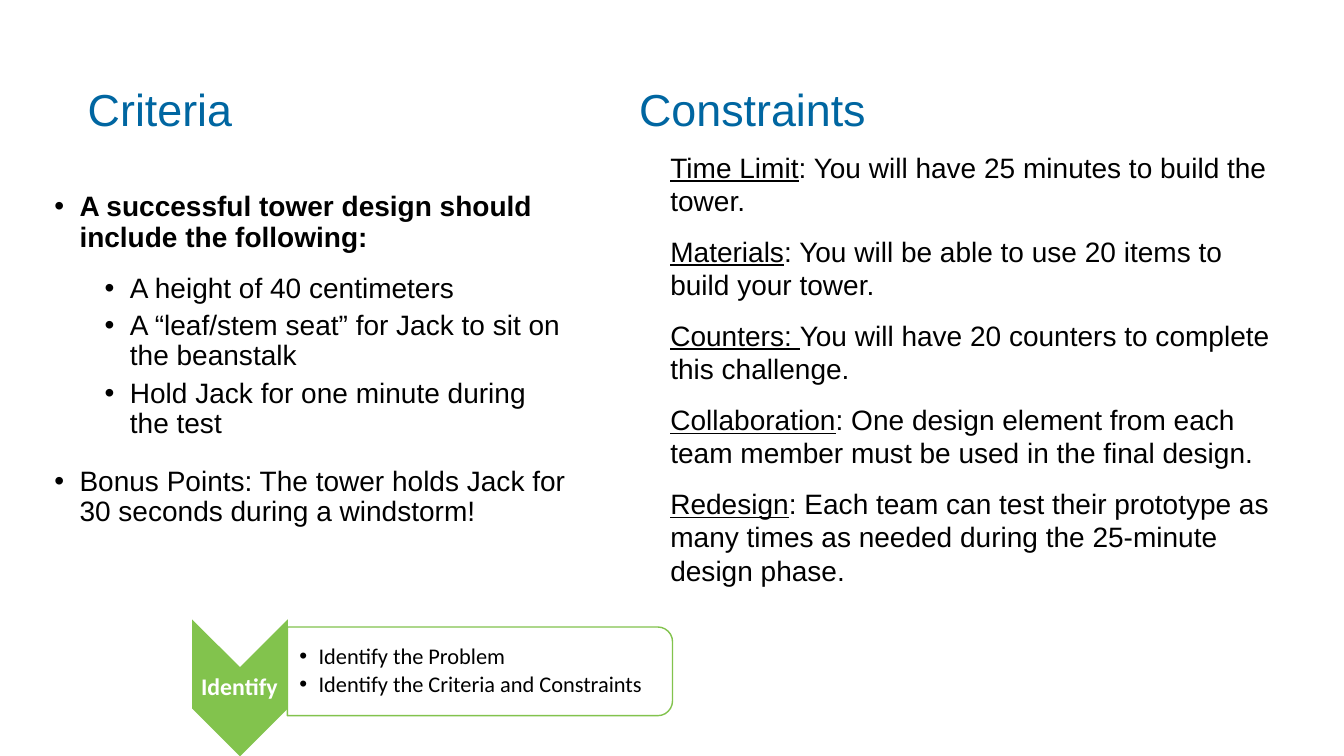
import dataclasses

import pptx
import pptx.dml.color
import pptx.enum.shapes
import pptx.enum.text
import pptx.oxml
import pptx.oxml.ns
import pptx.util

ANCHOR = pptx.enum.text.MSO_ANCHOR
ALIGN = pptx.enum.text.PP_ALIGN
SHAPE = pptx.enum.shapes.MSO_SHAPE
PX = 9144


@dataclasses.dataclass(frozen=True)
class Theme:
    heading: str = "0066A1"
    text: str = "000000"
    accent: str = "82C34D"
    light: str = "FFFFFF"
    body_font: str = "Arial"
    diagram_font: str = "Calibri"
    heading_size: int = 32
    body_size: int = 20
    step_size: int = 17
    step_item_size: int = 16


class SlideBuilder:
    def __init__(self, presentation, theme):
        self.theme = theme
        self.slide = presentation.slides.add_slide(presentation.slide_layouts[5])

    def place(self, shape, box):
        shape.left, shape.top, shape.width, shape.height = (value * PX for value in box)

    def frame(self, shape, anchor, insets=None):
        frame = shape.text_frame
        frame.word_wrap = True
        frame.auto_size = pptx.enum.text.MSO_AUTO_SIZE.NONE
        frame.vertical_anchor = anchor
        if insets:
            frame.margin_left, frame.margin_top, frame.margin_right, frame.margin_bottom = (
                value * PX for value in insets
            )
        return frame

    def text_box(self, box, anchor=ANCHOR.MIDDLE, insets=None):
        shape = self.slide.shapes.add_textbox(*(value * PX for value in box))
        return self.frame(shape, anchor, insets)

    def paragraph(self, frame, before=0, after=0, spacing=0.9, align=ALIGN.LEFT):
        first = frame.paragraphs[0]
        is_first = not first.runs
        paragraph = first if is_first else frame.add_paragraph()
        paragraph.alignment = align
        paragraph.line_spacing = spacing
        paragraph.space_before = pptx.util.Pt(0 if is_first else before)
        paragraph.space_after = pptx.util.Pt(after)
        return paragraph

    def bullet(self, paragraph, margin, hanging):
        properties = paragraph._p.get_or_add_pPr()
        properties.set("marL", str(margin * PX))
        properties.set("indent", str(-hanging * PX))
        namespace = pptx.oxml.ns.nsdecls("a")
        properties.append(pptx.oxml.parse_xml(f'<a:buFont {namespace} typeface="Arial"/>'))
        properties.append(pptx.oxml.parse_xml(f'<a:buChar {namespace} char="•"/>'))

    def run(self, paragraph, text, size, color, font=None, bold=False, underline=False):
        run = paragraph.add_run()
        run.text = text
        run.font.name = font or self.theme.body_font
        run.font.size = pptx.util.Pt(size)
        run.font.bold = bold
        run.font.underline = underline
        run.font.color.rgb = pptx.dml.color.RGBColor.from_string(color)

    def heading(self, frame, text):
        paragraph = self.paragraph(frame)
        self.run(paragraph, text, self.theme.heading_size, self.theme.heading)

    def title(self, text, box):
        shape = self.slide.shapes.title
        self.place(shape, box)
        self.heading(self.frame(shape, ANCHOR.MIDDLE), text)

    def shape(self, kind, box, fill, line=None, opacity=100):
        shape = self.slide.shapes.add_shape(kind, *(value * PX for value in box))
        shape.rotation = 90
        shape.shadow.inherit = False
        shape.fill.solid()
        shape.fill.fore_color.rgb = pptx.dml.color.RGBColor.from_string(fill)
        if opacity < 100:
            color = shape._element.spPr.find(".//" + pptx.oxml.ns.qn("a:srgbClr"))
            namespace = pptx.oxml.ns.nsdecls("a")
            color.append(pptx.oxml.parse_xml(f'<a:alpha {namespace} val="{opacity * 1000}"/>'))
        if line:
            shape.line.color.rgb = pptx.dml.color.RGBColor.from_string(line)
            shape.line.width = pptx.util.Pt(1)
        else:
            shape.line.fill.background()
        return shape


CRITERIA = [
    ("A successful tower design should include the following:", 25, 10, 10, True),
    ("A height of 40 centimeters", 75, 5, 0, False),
    ("A “leaf/stem seat” for Jack to sit on the beanstalk", 75, 5, 0, False),
    ("Hold Jack for one minute during the test", 75, 5, 10, False),
    ("Bonus Points: The tower holds Jack for 30 seconds during a windstorm!", 25, 10, 0, False),
]
CONSTRAINTS = [
    ("Time Limit", ": You will have 25 minutes to build the tower."),
    ("Materials", ": You will be able to use 20 items to build your tower."),
    ("Counters: ", "You will have 20 counters to complete this challenge."),
    ("Collaboration", ": One design element from each team member must be used in the final design."),
    ("Redesign", ": Each team can test their prototype as many times as needed during the 25-minute design phase."),
]
STEP_ITEMS = ["Identify the Problem", "Identify the Criteria and Constraints"]


def main():
    theme = Theme()
    presentation = pptx.Presentation()
    presentation.slide_width = 1333 * PX
    presentation.slide_height = 750 * PX
    builder = SlideBuilder(presentation, theme)

    builder.title("Criteria", (77, 73, 256, 76))
    criteria = builder.text_box((44, 148, 529, 419))
    for text, margin, before, after, bold in CRITERIA:
        paragraph = builder.paragraph(criteria, before, after)
        builder.bullet(paragraph, margin, 25)
        builder.run(paragraph, text, theme.body_size, theme.text, bold=bold)

    builder.shape(SHAPE.ROUND_2_SAME_RECTANGLE, (432, 475, 88, 382), theme.light, theme.accent, 90)
    items = builder.text_box((285, 626, 379, 80), insets=(12, 1, 1, 1))
    for text in STEP_ITEMS:
        paragraph = builder.paragraph(items, after=2.4)
        builder.bullet(paragraph, 19, 19)
        builder.run(paragraph, text, theme.step_item_size, theme.text, theme.diagram_font)

    builder.shape(SHAPE.CHEVRON, (170, 635, 136, 95), theme.accent)
    step = builder.text_box((190, 662, 95, 41), insets=(1, 1, 1, 1))
    paragraph = builder.paragraph(step, align=ALIGN.CENTER)
    builder.run(paragraph, "Identify", theme.step_size, theme.light, theme.diagram_font, bold=True)

    builder.heading(builder.text_box((624, 73, 342, 76)), "Constraints")
    constraints = builder.text_box((655, 144, 615, 448), ANCHOR.TOP)
    for label, text in CONSTRAINTS:
        paragraph = builder.paragraph(constraints, before=12, spacing=1.0)
        builder.run(paragraph, label, theme.body_size, theme.text, underline=True)
        builder.run(paragraph, text, theme.body_size, theme.text)

    presentation.save("out.pptx")


if __name__ == "__main__":
    main()
